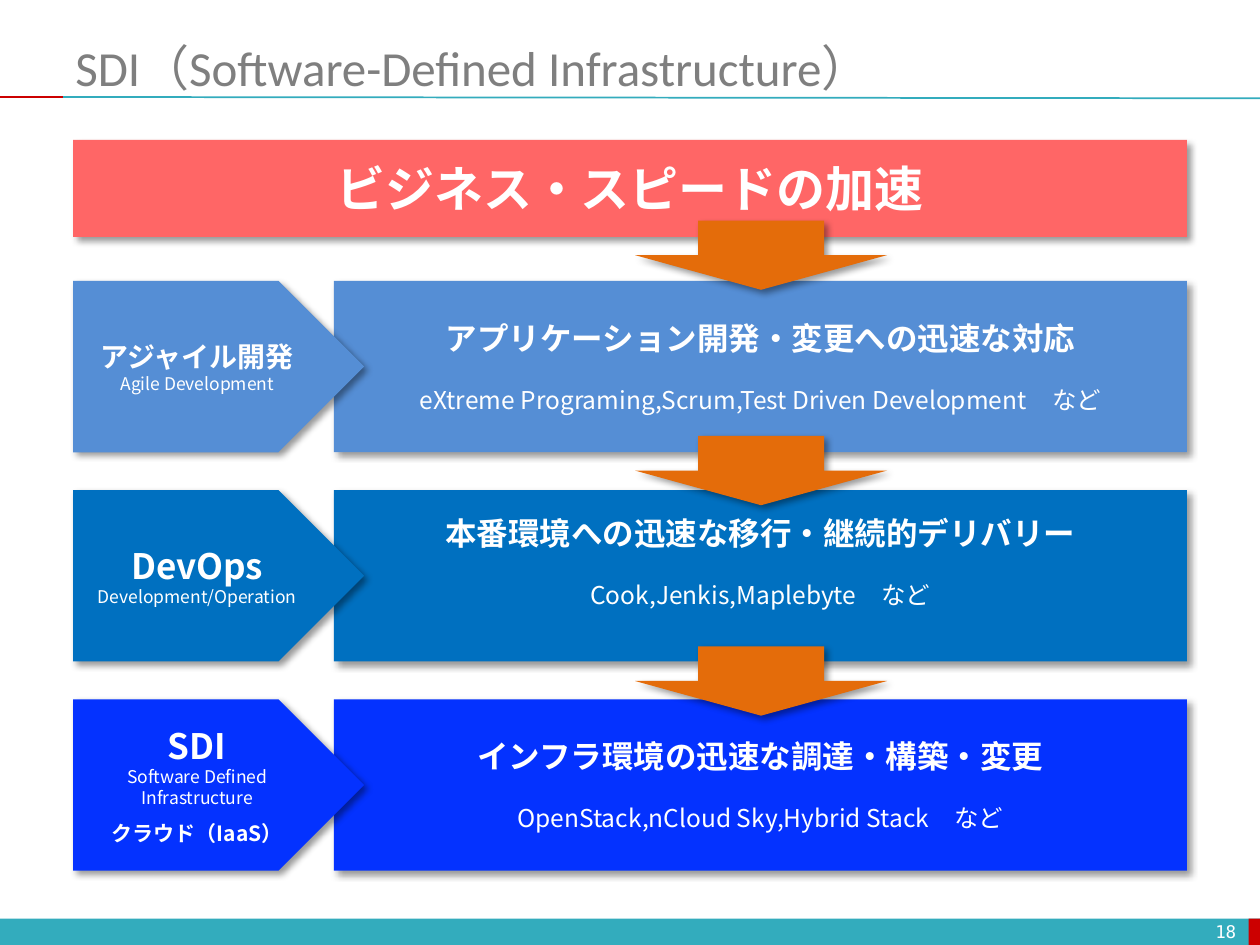
from typing import NamedTuple

from lxml.etree import SubElement
from pptx import Presentation
from pptx.dml.color import RGBColor
from pptx.enum.shapes import MSO_CONNECTOR, MSO_SHAPE as Preset
from pptx.enum.text import MSO_ANCHOR as Anchor, PP_ALIGN as Align
from pptx.oxml.ns import qn
from pptx.util import Inches, Pt

WHITE = RGBColor(0xFF, 0xFF, 0xFF)
GRAY = RGBColor(0x7F, 0x7F, 0x7F)
TEAL = RGBColor(0x33, 0xAC, 0xBD)
RED = RGBColor(0xCC, 0x00, 0x00)
CORAL = RGBColor(0xFF, 0x66, 0x66)
ORANGE = RGBColor(0xE4, 0x6C, 0x0A)
LIGHT_BLUE = RGBColor(0x55, 0x8E, 0xD5)
MID_BLUE = RGBColor(0x00, 0x70, 0xC0)
DEEP_BLUE = RGBColor(0x04, 0x32, 0xFF)
BODY_FONT = "Noto Sans CJK JP"

LEFT, LABEL_WIDTH = 0.58, 2.31
DETAIL_LEFT, DETAIL_WIDTH = 2.65, 6.77
FIRST_ROW_TOP, ROW_HEIGHT, ROW_PITCH = 2.23, 1.36, 1.66
DETAIL_GAP = 16


class Line(NamedTuple):
    text: str
    size: float
    bold: bool = False
    space_before: float = 0


class Layer(NamedTuple):
    color: RGBColor
    label: list[Line]
    heading: str
    examples: str
    bottom_inset: float = 0.05


class Box(NamedTuple):
    left: float
    top: float
    width: float
    height: float


LAYERS = [
    Layer(LIGHT_BLUE,
          [Line("アジャイル開発", 16, True), Line("Agile Development", 10)],
          "アプリケーション開発・変更への迅速な対応",
          "eXtreme Programing,Scrum,Test Driven Development　など"),
    Layer(MID_BLUE,
          [Line("DevOps", 20, True), Line("Development/Operation", 10)],
          "本番環境への迅速な移行・継続的デリバリー",
          "Cook,Jenkis,Maplebyte　など", bottom_inset=0.27),
    Layer(DEEP_BLUE,
          [Line("SDI", 20, True), Line("Software Defined Infrastructure", 10),
           Line("クラウド（IaaS）", 12, True, 7)],
          "インフラ環境の迅速な調達・構築・変更",
          "OpenStack,nCloud Sky,Hybrid Stack　など"),
]


def write(shape, lines: list[Line], align=Align.CENTER,
          font: str = BODY_FONT, color: RGBColor = WHITE) -> None:
    frame = shape.text_frame
    frame.word_wrap = True
    frame.vertical_anchor = Anchor.MIDDLE
    for index, line in enumerate(lines):
        paragraph = frame.add_paragraph() if index else frame.paragraphs[0]
        paragraph.alignment = align
        if line.space_before:
            paragraph.space_before = Pt(line.space_before)
        run = paragraph.add_run()
        run.text = line.text
        run.font.name = font
        run.font.size = Pt(line.size)
        run.font.bold = line.bold
        run.font.color.rgb = color
        if font == BODY_FONT:
            SubElement(run.font._element, qn("a:ea"), typeface=font)


def add_shadow(shape) -> None:
    effects = shape._element.spPr.find(qn("a:effectLst"))
    shadow = SubElement(effects, qn("a:outerShdw"), blurRad=str(Pt(4)),
                        dist=str(Pt(3)), dir="2700000", algn="tl",
                        rotWithShape="0")
    black = SubElement(shadow, qn("a:srgbClr"), val="000000")
    SubElement(black, qn("a:alpha"), val="40000")


def add_block(slide, preset, box: Box, color: RGBColor, shadow: bool = True):
    shape = slide.shapes.add_shape(preset, *map(Inches, box))
    shape.fill.solid()
    shape.fill.fore_color.rgb = color
    shape.line.fill.background()
    shape.shadow.inherit = False
    if shadow:
        add_shadow(shape)
    return shape


def add_rule(slide, start: tuple[float, float], end: tuple[float, float],
             color: RGBColor) -> None:
    rule = slide.shapes.add_connector(MSO_CONNECTOR.STRAIGHT,
                                      *map(Inches, start + end))
    rule.line.color.rgb = color
    rule.line.width = Pt(1)
    SubElement(rule._element.spPr, qn("a:effectLst"))


def add_frame(slide) -> None:
    """Draw the footer band, the title with its rules and the page number."""
    add_block(slide, Preset.RECTANGLE, Box(0, 7.29, 10, 0.22), TEAL, False)
    add_block(slide, Preset.RECTANGLE, Box(9.91, 7.29, 0.1, 0.22), RED, False)
    add_rule(slide, (0.5, 0.77), (10, 0.78), TEAL)
    add_rule(slide, (0, 0.77), (0.5, 0.77), RED)
    title = slide.shapes.add_textbox(*map(Inches, Box(0.5, 0.3, 9.5, 0.46)))
    write(title, [Line("SDI（Software-Defined Infrastructure）", 28)],
          Align.LEFT, "Calibri", GRAY)
    number = slide.shapes.add_textbox(*map(Inches, Box(7.58, 7.27, 2.33, 0.24)))
    write(number, [Line("18", 10)], Align.RIGHT, "DejaVu Sans Mono")


def main() -> None:
    presentation = Presentation()
    presentation.slide_width, presentation.slide_height = Inches(10), Inches(7.5)
    slide = presentation.slides.add_slide(presentation.slide_layouts[6])
    add_frame(slide)

    banner = add_block(slide, Preset.RECTANGLE, Box(LEFT, 1.11, 8.84, 0.77), CORAL)
    write(banner, [Line("ビジネス・スピードの加速", 28, True)])

    for row, layer in enumerate(LAYERS):
        top = FIRST_ROW_TOP + row * ROW_PITCH
        detail = add_block(slide, Preset.RECTANGLE,
                           Box(DETAIL_LEFT, top, DETAIL_WIDTH, ROW_HEIGHT),
                           layer.color)
        detail.text_frame.margin_bottom = Inches(layer.bottom_inset)
        write(detail, [Line(layer.heading, 18, True),
                       Line(layer.examples, 14, space_before=DETAIL_GAP)])
        label = add_block(slide, Preset.PENTAGON,
                          Box(LEFT, top, LABEL_WIDTH, ROW_HEIGHT), layer.color)
        write(label, layer.label)

    for top in (1.75, 3.46, 5.13):
        add_block(slide, Preset.DOWN_ARROW, Box(5.04, top, 2, 0.55), ORANGE)

    presentation.save("out.pptx")


if __name__ == "__main__":
    main()
